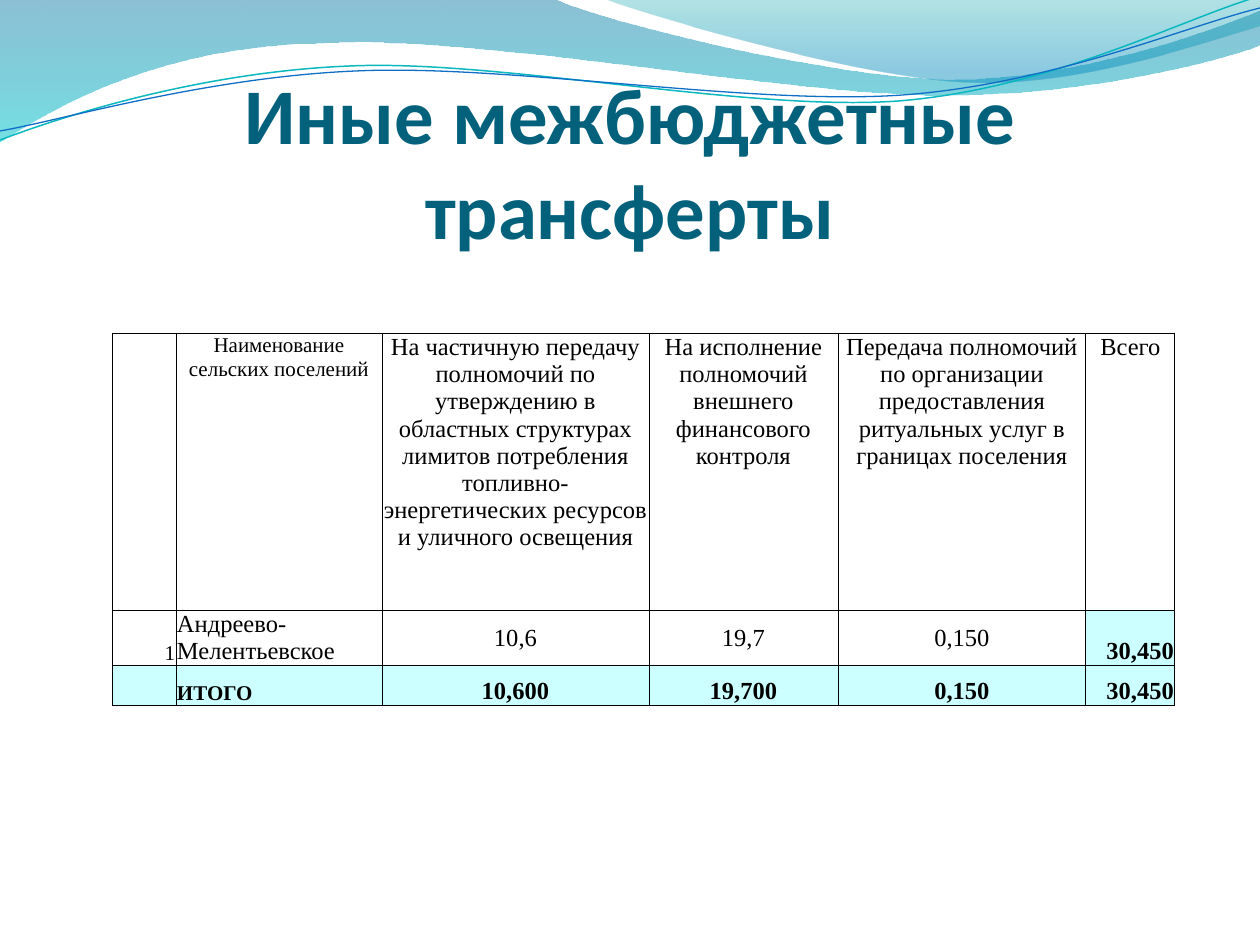
from lxml.etree import SubElement
from pptx import Presentation
from pptx.dml.color import RGBColor
from pptx.enum.text import MSO_ANCHOR as Anchor, MSO_AUTO_SIZE as AutoSize, PP_ALIGN as Align
from pptx.oxml.ns import qn
from pptx.util import Pt

PX = 7257  # EMU in one px, at 126 px to the inch
PAGE_WIDTH, PAGE_HEIGHT = 1260, 945

BLACK = RGBColor(0x00, 0x00, 0x00)
TITLE_TEAL = RGBColor(0x04, 0x61, 0x7B)
TOTAL_FILL = RGBColor(0xCC, 0xFF, 0xFF)
DEEP_BLUE = RGBColor(0x00, 0x74, 0xA1)
AQUA = RGBColor(0x00, 0xC6, 0xCF)
SEA_GREEN = RGBColor(0x00, 0xA1, 0xA9)
SKY_BLUE = RGBColor(0x00, 0x8B, 0xBF)
LINE_AQUA = RGBColor(0x0A, 0xB8, 0xBF)
LINE_BLUE = RGBColor(0x0F, 0x6F, 0xC6)

# Each outline starts at a point; pairs are straight steps, sixes are Bezier curves.
LEFT_WAVE = [
    (0, -1), (554, -1), (600, 21, 837, 79, 955, 79), (1074, 79, 1207, 33, 1260, 11),
    (1261, 45), (1239, 55, 1096, 96, 940, 95), (784, 95, 481, 35, 324, 43),
    (163, 45, 58, 105, -1, 142), (0, -1)]
RIGHT_WAVE = [
    (604, -1), (641, 14, 859, 78, 969, 82), (1079, 87, 1211, 40, 1260, 26),
    (1260, 0), (604, -1)]
AQUA_CURVE = [
    (0, 140), (60, 117, 199, 72, 349, 66), (498, 59, 747, 112, 898, 101),
    (1050, 89, 1182, 19, 1257, -3)]
BLUE_CURVE = [
    (0, 131), (59, 121, 207, 77, 357, 71), (508, 64, 752, 106, 903, 95),
    (1053, 84, 1186, 26, 1260, 8)]

COLUMN_WIDTHS = [64, 206, 267, 189, 248, 89]
ROW_HEIGHTS = [277, 40, 40]
HEADERS = [
    "", "Наименование сельских поселений",
    "На частичную передачу полномочий по утверждению в областных структурах лимитов "
    "потребления топливно-энергетических ресурсов и уличного освещения",
    "На исполнение полномочий внешнего финансового контроля",
    "Передача полномочий по организации предоставления ритуальных услуг в границах поселения",
    "Всего"]
SETTLEMENT = ["1", "Андреево-Мелентьевское", "10,6", "19,7", "0,150", "30,450"]
TOTALS = ["", "ИТОГО", "10,600", "19,700", "0,150", "30,450"]
BODY_ALIGNS = [Align.RIGHT, Align.LEFT, Align.CENTER, Align.CENTER, Align.CENTER, Align.RIGHT]


def write_text(frame, text, size, font="Times New Roman", color=BLACK, bold=False,
               align=Align.LEFT):
    para = frame.paragraphs[0]
    para.alignment = align
    span = para.add_run()
    span.text = text
    span.font.size = Pt(size)
    span.font.name = font
    span.font.bold = bold
    span.font.color.rgb = color


def add_outline(page, steps, closed):
    """Draw a freeform whose six-number steps become Bezier curves."""
    (start_x, start_y), *rest = steps
    points = [pair for step in rest for pair in zip(step[::2], step[1::2])]
    builder = page.shapes.build_freeform(start_x, start_y, scale=PX)
    builder.add_line_segments(points, close=closed)
    shape = builder.convert_to_shape()
    shape.shadow.inherit = False
    lines = iter(list(shape._element.iter(qn("a:lnTo"))))
    for step in rest:
        first = next(lines)
        if len(step) == 6:
            first.tag = qn("a:cubicBezTo")
            for _ in range(2):
                line = next(lines)
                first.append(line[0])
                line.getparent().remove(line)
    return shape


def add_wave(page, steps, stops):
    """Fill an outline from top to bottom; a stop is position, colour, opacity in %."""
    shape = add_outline(page, steps, closed=True)
    shape.line.fill.background()
    shape.fill.gradient()
    shape.fill.gradient_angle = 270
    for stop, (position, color, opacity) in zip(shape.fill.gradient_stops, stops):
        stop.position = position
        stop.color.rgb = color
    colors = shape._element.spPr.find(qn("a:gradFill")).iter(qn("a:srgbClr"))
    for element, (position, color, opacity) in zip(colors, stops):
        SubElement(element, qn("a:alpha"), val=str(opacity * 1000))


def add_curve(page, steps, color, width):
    shape = add_outline(page, steps, closed=False)
    shape.fill.background()
    shape.line.color.rgb = color
    shape.line.width = Pt(width)


def add_header_waves(page):
    add_wave(page, LEFT_WAVE, [(0, DEEP_BLUE, 45), (1, AQUA, 55)])
    add_wave(page, RIGHT_WAVE, [(0, SEA_GREEN, 30), (0.8, SKY_BLUE, 45)])
    add_curve(page, AQUA_CURVE, LINE_AQUA, 0.85)
    add_curve(page, BLUE_CURVE, LINE_BLUE, 0.75)


def place_title(page, left, top, width, height):
    title = page.shapes.title
    title.left, title.top, title.width, title.height = (
        value * PX for value in (left, top, width, height))
    frame = title.text_frame
    frame.word_wrap = True
    frame.auto_size = AutoSize.NONE
    frame.vertical_anchor = Anchor.BOTTOM
    frame.margin_left = frame.margin_right = frame.margin_bottom = 0
    frame.margin_top = 6 * PX
    write_text(frame, "Иные межбюджетные трансферты", 45, font="Calibri",
               color=TITLE_TEAL, bold=True, align=Align.CENTER)
    page.shapes._spTree.append(title._element)  # in front of the waves


def set_borders(cell):
    properties = cell._tc.get_or_add_tcPr()
    for position, side in enumerate(("a:lnL", "a:lnR", "a:lnT", "a:lnB")):
        border = SubElement(properties, qn(side), w=str(Pt(0.5)))
        fill = SubElement(border, qn("a:solidFill"))
        SubElement(fill, qn("a:srgbClr"), val=str(BLACK))
        properties.insert(position, border)


def format_cell(cell, text, row, column):
    cell.margin_left = cell.margin_right = cell.margin_top = PX
    cell.margin_bottom = 0
    if row == 2 or (row == 1 and column == 5):
        cell.fill.solid()
        cell.fill.fore_color.rgb = TOTAL_FILL
    else:
        cell.fill.background()
    set_borders(cell)
    if row == 0:
        cell.vertical_anchor = Anchor.TOP
    elif row == 1 and column in (2, 3, 4):
        cell.vertical_anchor = Anchor.MIDDLE
    else:
        cell.vertical_anchor = Anchor.BOTTOM
    if text:
        small = column == 0 or (column == 1 and row != 1)
        write_text(cell.text_frame, text, 12 if small else 14,
                   bold=row == 2 or (row == 1 and column == 5),
                   align=Align.CENTER if row == 0 else BODY_ALIGNS[column])


def add_transfer_table(page, left, top):
    rows = [HEADERS, SETTLEMENT, TOTALS]
    table = page.shapes.add_table(
        len(rows), len(HEADERS), left * PX, top * PX,
        sum(COLUMN_WIDTHS) * PX, sum(ROW_HEIGHTS) * PX).table
    table.first_row = table.horz_banding = False
    for column, width in zip(table.columns, COLUMN_WIDTHS):
        column.width = width * PX
    for row, height in zip(table.rows, ROW_HEIGHTS):
        row.height = height * PX
    for row, texts in enumerate(rows):
        for column, text in enumerate(texts):
            format_cell(table.cell(row, column), text, row, column)


def main():
    deck = Presentation()
    deck.slide_width, deck.slide_height = PAGE_WIDTH * PX, PAGE_HEIGHT * PX
    page = deck.slides.add_slide(deck.slide_layouts[5])
    add_header_waves(page)
    place_title(page, 63, 97, 1134, 158)
    add_transfer_table(page, 112, 333)
    deck.save("out.pptx")


if __name__ == "__main__":
    main()
